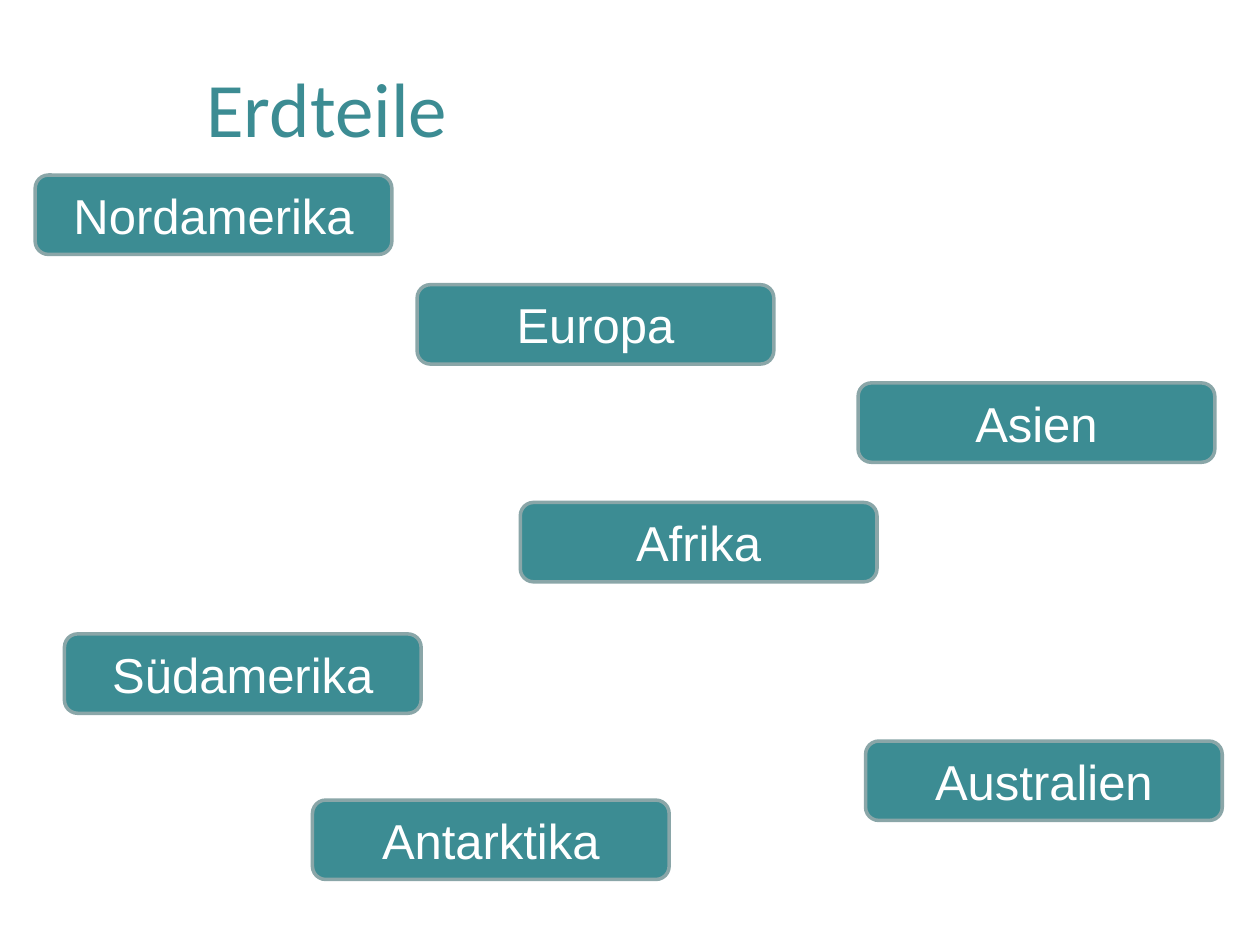
from pptx import Presentation
from pptx.dml.color import RGBColor
from pptx.enum.shapes import MSO_SHAPE
from pptx.enum.text import MSO_ANCHOR, MSO_AUTO_SIZE, PP_ALIGN
from pptx.util import Cm, Pt

ROUNDED = MSO_SHAPE.ROUNDED_RECTANGLE
MIDDLE = MSO_ANCHOR.MIDDLE
NO_AUTOFIT = MSO_AUTO_SIZE.NONE
CENTER = PP_ALIGN.CENTER
TITLE_ONLY = 5

COLORS = {"teal": "3C8C93", "border": "8AA6A8", "white": "FFFFFF"}

# Left and top of each label, in centimetres
CONTINENTS = {
    "Afrika": (10.49, 10.13),
    "Südamerika": (1.3, 12.78),
    "Nordamerika": (0.71, 3.53),
    "Australien": (17.45, 14.94),
    "Europa": (8.41, 5.74),
    "Asien": (17.3, 7.72),
    "Antarktika": (6.3, 16.13),
}


class SlideBuilder:
    label_width = Cm(7.19)
    label_height = Cm(1.6)

    def __init__(self, slide):
        self.slide = slide

    def color(self, name):
        return RGBColor.from_string(COLORS[name])

    def set_text(self, shape, text, font_name, size, color):
        frame = shape.text_frame
        frame.text = text
        frame.word_wrap = True
        frame.auto_size = NO_AUTOFIT
        frame.vertical_anchor = MIDDLE
        para = frame.paragraphs[0]
        para.alignment = CENTER
        font = para.runs[0].font
        font.name = font_name
        font.size = Pt(size)
        font.color.rgb = self.color(color)

    def title(self, text, left, top, width, height):
        box = self.slide.shapes.title
        box.left, box.top = Cm(left), Cm(top)
        box.width, box.height = Cm(width), Cm(height)
        self.set_text(box, text, "Calibri", 44, "teal")

    def label(self, text, left, top):
        box = self.slide.shapes.add_shape(
            ROUNDED, Cm(left), Cm(top), self.label_width, self.label_height)
        box.shadow.inherit = False
        box.fill.solid()
        box.fill.fore_color.rgb = self.color("teal")
        box.line.color.rgb = self.color("border")
        box.line.width = Pt(2)
        self.set_text(box, text, "Arial", 28, "white")


def main():
    deck = Presentation()
    deck.slide_width, deck.slide_height = Cm(25.4), Cm(19.05)
    page = SlideBuilder(deck.slides.add_slide(deck.slide_layouts[TITLE_ONLY]))

    # Heading
    page.title("Erdteile", 1.19, 1.17, 10.8, 1.96)

    # Continent labels, placed as on a world map
    for name, (left, top) in CONTINENTS.items():
        page.label(name, left, top)

    deck.save("out.pptx")


if __name__ == "__main__":
    main()
